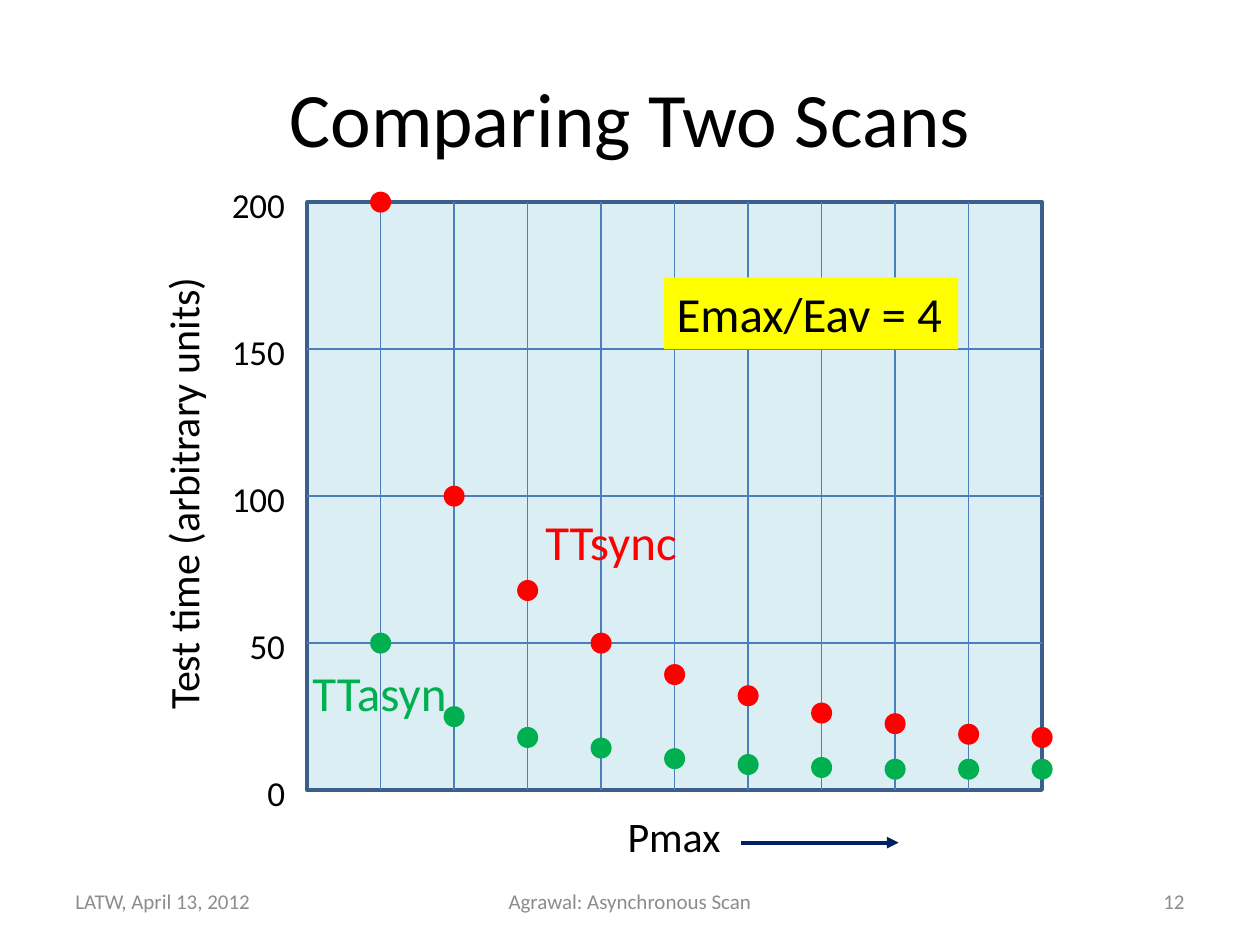
"""Build the slide that compares synchronous and asynchronous scan test times."""
from lxml import etree
from pptx import Presentation
from pptx.dml.color import RGBColor
from pptx.enum.shapes import MSO_CONNECTOR, MSO_SHAPE
from pptx.enum.text import MSO_ANCHOR, PP_ALIGN
from pptx.oxml.ns import qn
from pptx.util import Pt

STRAIGHT = MSO_CONNECTOR.STRAIGHT
RECTANGLE, OVAL = MSO_SHAPE.RECTANGLE, MSO_SHAPE.OVAL
TOP, MIDDLE = MSO_ANCHOR.TOP, MSO_ANCHOR.MIDDLE
LEFT, CENTER, RIGHT = PP_ALIGN.LEFT, PP_ALIGN.CENTER, PP_ALIGN.RIGHT

BLACK = RGBColor(0x00, 0x00, 0x00)
GRAY = RGBColor(0x8C, 0x8C, 0x8C)
PALE_BLUE = RGBColor(0xDB, 0xEE, 0xF4)
FRAME_BLUE = RGBColor(0x3A, 0x5F, 0x8C)
GRID_BLUE = RGBColor(0x4B, 0x7E, 0xBC)
NAVY = RGBColor(0x00, 0x20, 0x60)
RED = RGBColor(0xFF, 0x00, 0x00)
GREEN = RGBColor(0x00, 0xB0, 0x50)
YELLOW = RGBColor(0xFF, 0xFF, 0x00)

PLOT_LEFT, PLOT_TOP, PLOT_WIDTH, PLOT_HEIGHT = 175.5, 115.5, 420, 336
PLOT_RIGHT, PLOT_BOTTOM = PLOT_LEFT + PLOT_WIDTH, PLOT_TOP + PLOT_HEIGHT
COLUMNS, ROWS, MAXIMUM = 10, 4, 200
COLUMN_WIDTH, ROW_HEIGHT = PLOT_WIDTH / COLUMNS, PLOT_HEIGHT / ROWS
DOT = 12
LABEL_LINE = 28

SERIES = [
    (RED, [200, 100, 67.9, 50, 39.3, 32.1, 26.2, 22.6, 19, 17.9]),
    (GREEN, [50, 25, 17.9, 14.3, 10.7, 8.7, 7.7, 7.1, 7.1, 7.1]),
]

presentation = Presentation()
presentation.slide_width, presentation.slide_height = Pt(720), Pt(540)
slide = presentation.slides.add_slide(presentation.slide_layouts[5])
shapes = slide.shapes


def add_text(lines, box, size, color, alignment=LEFT, anchor=TOP, wrap=False):
    text_box = shapes.add_textbox(*map(Pt, box))
    frame = text_box.text_frame
    frame.text = "\n".join(lines)
    frame.word_wrap = wrap
    frame.vertical_anchor = anchor
    for paragraph in frame.paragraphs:
        paragraph.alignment = alignment
        paragraph.font.name = "Calibri"
        paragraph.font.size = Pt(size)
        paragraph.font.color.rgb = color
    return text_box


def add_line(start, end, color, width):
    line = shapes.add_connector(STRAIGHT, *map(Pt, start + end))
    line.line.color.rgb = color
    line.line.width = Pt(width)
    etree.SubElement(line._element.spPr, qn("a:effectLst"))
    return line


title = shapes.title
title.left, title.top, title.width, title.height = map(Pt, (36, 21.6, 648, 90))
title.text_frame.text = "Comparing Two Scans"
title.text_frame.vertical_anchor = MIDDLE
title_paragraph = title.text_frame.paragraphs[0]
title_paragraph.alignment = CENTER
title_paragraph.font.name = "Calibri"
title_paragraph.font.size = Pt(44)
title_paragraph.font.color.rgb = BLACK

for text, left, width, alignment in [
    ("LATW, April 13, 2012", 36, 168, LEFT),
    ("Agrawal: Asynchronous Scan", 246, 228, CENTER),
    ("12", 516, 168, RIGHT),
]:
    add_text([text], (left, 500.5, width, 28.75), 12, GRAY, alignment, MIDDLE, True)

plot = shapes.add_shape(RECTANGLE, *map(Pt, (PLOT_LEFT, PLOT_TOP, PLOT_WIDTH, PLOT_HEIGHT)))
plot.shadow.inherit = False
plot.fill.solid()
plot.fill.fore_color.rgb = PALE_BLUE
plot.line.color.rgb = FRAME_BLUE
plot.line.width = Pt(2)

for column in range(1, COLUMNS):
    x = PLOT_LEFT + column * COLUMN_WIDTH
    add_line((x, PLOT_TOP), (x, PLOT_BOTTOM), GRID_BLUE, 0.75)
for row in range(1, ROWS):
    y = PLOT_TOP + row * ROW_HEIGHT
    add_line((PLOT_LEFT, y), (PLOT_RIGHT, y), GRID_BLUE, 0.75)

for color, values in SERIES:
    for column, value in enumerate(values, start=1):
        x = PLOT_LEFT + column * COLUMN_WIDTH
        y = PLOT_BOTTOM - value / MAXIMUM * PLOT_HEIGHT
        dot = shapes.add_shape(OVAL, Pt(x - DOT / 2), Pt(y - DOT / 2), Pt(DOT), Pt(DOT))
        dot.shadow.inherit = False
        dot.fill.solid()
        dot.fill.fore_color.rgb = color
        dot.line.fill.background()

axis_title = add_text(["Test time (arbitrary units)"], (-27.4, 262.8, 263.5, 36), 24, BLACK)
axis_title.rotation = 270

scale = add_text(["200", "150", "100", "50", "0"], (124.5, 97.5, 45.5, 375), 20, BLACK, RIGHT)
for paragraph in scale.text_frame.paragraphs:
    paragraph.line_spacing = Pt(LABEL_LINE)
for paragraph in scale.text_frame.paragraphs[1:]:
    paragraph.space_before = Pt(ROW_HEIGHT - LABEL_LINE)

add_text(["TTsync"], (304.5, 289, 90.5, 41), 28, RED)
add_text(["TTasyn"], (171.5, 375, 92, 41), 28, GREEN)

arrow = add_line((423.5, 481.5), (513.5, 481.5), NAVY, 2.25)
etree.SubElement(arrow.line._get_or_add_ln(), qn("a:tailEnd"), type="triangle")
add_text(["Pmax"], (351.5, 459.5, 68.5, 36), 24, BLACK)

ratio = add_text(["Emax/Eav = 4"], (379.5, 158.5, 168, 41), 28, BLACK)
ratio.fill.solid()
ratio.fill.fore_color.rgb = YELLOW

presentation.save("out.pptx")
